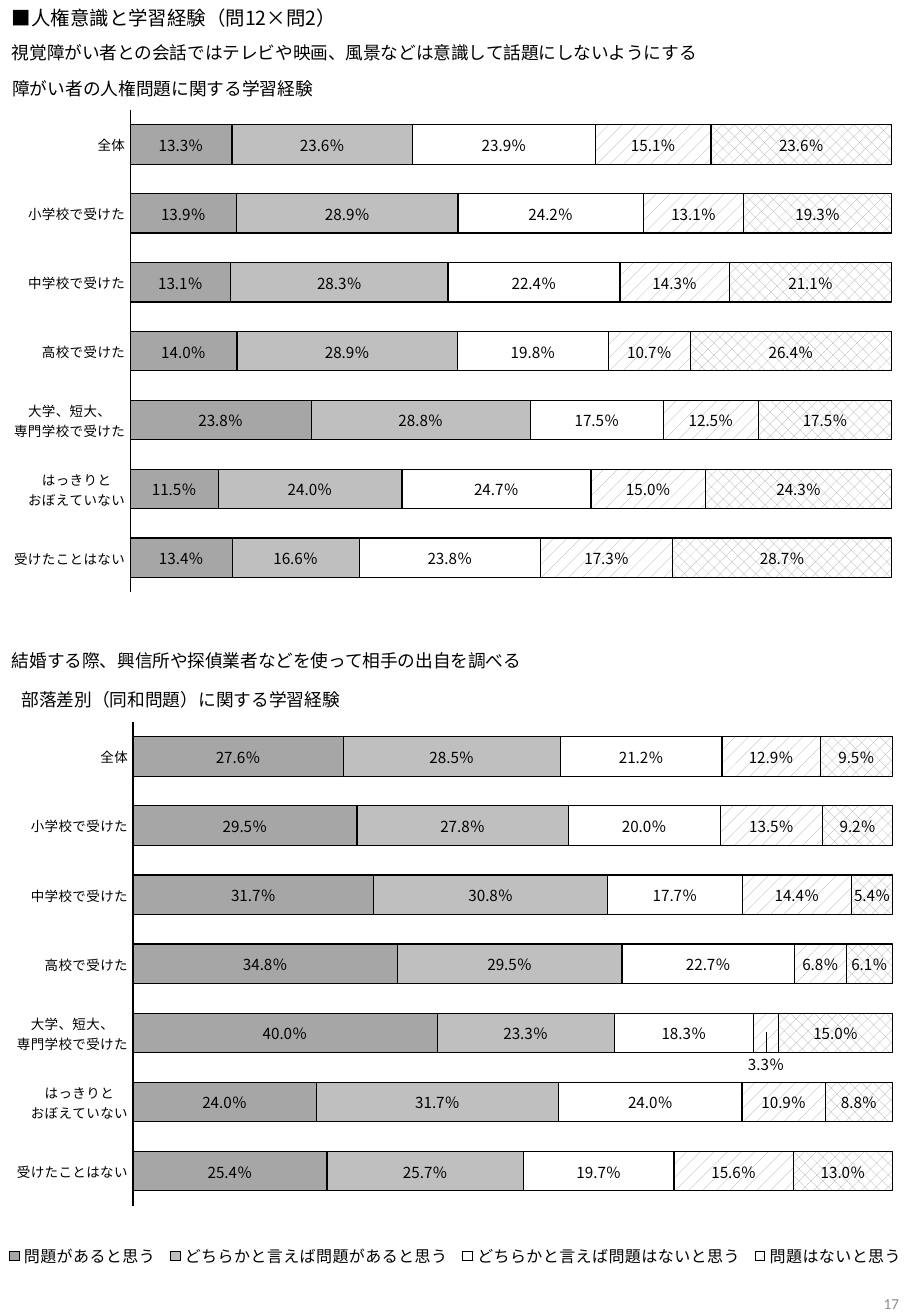
from dataclasses import dataclass

from pptx import Presentation, util as u
from pptx.chart.data import CategoryChartData
from pptx.dml.color import RGBColor
from pptx.enum import chart as ch, dml, text
from pptx.oxml import parse_xml
from pptx.oxml.ns import nsdecls, qn
from pptx.oxml.xmlchemy import OxmlElement


@dataclass(frozen=True)
class Theme:
    font: str = "Noto Sans CJK JP"
    number_font: str = "Calibri"
    ink: str = "000000"
    page_grey: str = "8C8C8C"
    dark: str = "A6A6A6"
    light: str = "BFBFBF"
    paper: str = "FFFFFF"
    heading: float = 11.5
    question: float = 10.5
    legend: float = 9.5
    label: float = 9
    category: float = 8
    line: float = 0.75


T = Theme()
PERCENT = '0.0"％"'
CATEGORIES = ["全体", "小学校で受けた", "中学校で受けた", "高校で受けた",
              "大学、短大、\n専門学校で受けた", "はっきりと\nおぼえていない",
              "受けたことはない"]
ANSWERS = ["問題があると思う", "どちらかと言えば問題があると思う",
           "どちらかと言えば問題はないと思う", "問題はないと思う", "わからない"]
FILLS = [T.dark, T.light, None,
         dml.MSO_PATTERN.PERCENT_10, dml.MSO_PATTERN.PERCENT_30]

# One row per answer, one value per category
DISABILITY = [
    [13.3, 13.9, 13.1, 14.0, 23.8, 11.5, 13.4],
    [23.6, 28.9, 28.3, 28.9, 28.8, 24.0, 16.6],
    [23.9, 24.2, 22.4, 19.8, 17.5, 24.7, 23.8],
    [15.1, 13.1, 14.3, 10.7, 12.5, 15.0, 17.3],
    [23.6, 19.3, 21.1, 26.4, 17.5, 24.3, 28.7],
]
BURAKU = [
    [27.6, 29.5, 31.7, 34.8, 40.0, 24.0, 25.4],
    [28.5, 27.8, 30.8, 29.5, 23.3, 31.7, 25.7],
    [21.2, 20.0, 17.7, 22.7, 18.3, 24.0, 19.7],
    [12.9, 13.5, 14.4, 6.8, 3.3, 10.9, 15.6],
    [9.5, 9.2, 5.4, 6.1, 15.0, 8.8, 13.0],
]


def rgb(value):
    return RGBColor.from_string(value)


def style(font, size, color=T.ink, name=T.font):
    font.size, font.name, font.bold = u.Pt(size), name, False
    font.color.rgb = rgb(color)
    east_asian = OxmlElement("a:ea")
    east_asian.set("typeface", name)
    font._element.find(qn("a:latin")).addnext(east_asian)


def add_text(s, content, box, size, color=T.ink, name=T.font, align=None):
    tf = s.shapes.add_textbox(*map(u.Cm, box)).text_frame
    tf.word_wrap = True
    tf.text = content
    p = tf.paragraphs[0]
    p.alignment = align
    style(p.runs[0].font, size, color, name)
    return tf


def set_layout(parent, index, x, y, size=None, edge=True, inner=False):
    """Give a chart part a manual place, in fractions of the chart."""
    for old in parent.findall(qn("c:layout")):
        parent.remove(old)
    values = [("layoutTarget", "inner")] if inner else []
    if edge:
        values += [("xMode", "edge"), ("yMode", "edge")]
    values += [("x", x), ("y", y)]
    if size:
        values += zip("wh", size)
    items = "".join(f'<c:{tag} val="{value}"/>' for tag, value in values)
    parent.insert(index, parse_xml(
        f'<c:layout {nsdecls("c")}><c:manualLayout>{items}'
        "</c:manualLayout></c:layout>"))


def paint(series, fill):
    f = series.format.fill
    if fill is None:
        f.background()
    elif isinstance(fill, str):
        f.solid()
        f.fore_color.rgb = rgb(fill)
    else:
        f.patterned()
        f.pattern = fill
        f.fore_color.rgb = rgb(T.dark)
        f.back_color.rgb = rgb(T.paper)
    series.format.line.color.rgb = rgb(T.ink)
    series.format.line.width = u.Pt(T.line)


def add_bars(s, title, rows, box, title_at, plot_at, plot_size):
    data = CategoryChartData(number_format=PERCENT)
    data.categories = CATEGORIES
    for answer, values in zip(ANSWERS, rows):
        data.add_series(answer, values)
    chart = s.shapes.add_chart(ch.XL_CHART_TYPE.BAR_STACKED_100,
                               *map(u.Cm, box), data).chart
    style(chart.font, T.label)
    chart.has_legend = False

    # Title and plot area
    tf = chart.chart_title.text_frame
    tf.text = title
    style(tf.paragraphs[0].runs[0].font, T.question)
    set_layout(chart.chart_title._element, 1, *title_at)
    plot_area = chart._chartSpace.chart.plotArea
    set_layout(plot_area, 0, *plot_at, plot_size, inner=True)

    # Axes
    axis = chart.category_axis
    axis.reverse_order = True
    axis.major_tick_mark = ch.XL_TICK_MARK.NONE
    axis.format.line.color.rgb = rgb(T.ink)
    axis.format.line.width = u.Pt(T.line)
    style(axis.tick_labels.font, T.category)
    chart.value_axis.visible = False
    chart.value_axis.has_major_gridlines = False

    # Bars and their labels
    plot = chart.plots[0]
    plot.gap_width, plot.overlap = 75, 100
    for series, fill in zip(plot.series, FILLS):
        paint(series, fill)
        labels = series.data_labels
        labels.show_value = True
        labels.number_format = PERCENT
        labels.number_format_is_linked = False
        labels.position = ch.XL_LABEL_POSITION.CENTER
        style(labels.font, T.label)
    return chart


def lower_label(chart, answer, category, shift):
    """Move the label of a narrow bar below it."""
    label = chart.plots[0].series[answer].points[category].data_label
    style(label.font, T.label)
    label.position = ch.XL_LABEL_POSITION.CENTER
    element = label._dLbl
    set_layout(element, 1, 0, shift, edge=False)
    number_format = OxmlElement("c:numFmt")
    number_format.set("formatCode", PERCENT)
    number_format.set("sourceLinked", "0")
    element.insert(2, number_format)


def add_legend(chart, at, size):
    chart.has_legend = True
    legend = chart.legend
    legend.position = ch.XL_LEGEND_POSITION.BOTTOM
    legend.include_in_layout = False
    style(legend.font, T.legend)
    set_layout(legend._element, 1, *at, size)


def main():
    prs = Presentation()
    prs.slide_width, prs.slide_height = u.Cm(19.05), u.Cm(27.51)
    s = prs.slides.add_slide(prs.slide_layouts[6])

    # Disability rights
    add_bars(s, "障がい者の人権問題に関する学習経験", DISABILITY,
             (0, 0.99, 19.05, 11.71), (0.01, 0.04), (0.143, 0.112), (0.836, 0.861))
    add_text(s, "■人権意識と学習経験（問12×問2）", (0, 0, 19.05, 0.74), T.heading)
    add_text(s, "視覚障がい者との会話ではテレビや映画、風景などは意識して話題にしないようにする",
             (0, 0.74, 19.05, 0.71), T.question)

    # Buraku discrimination, with the legend for both charts
    add_text(s, "結婚する際、興信所や探偵業者などを使って相手の出自を調べる",
             (0, 13.46, 19.05, 0.71), T.question)
    chart = add_bars(s, "部落差別（同和問題）に関する学習経験", BURAKU,
                     (0, 13.84, 19.05, 12.8), (0.02, 0.03), (0.146, 0.098), (0.834, 0.79))
    lower_label(chart, answer=3, category=4, shift=0.05)
    add_legend(chart, (0, 0.94), (1, 0.06))

    # Page number
    tf = add_text(s, "17", (14.76, 27, 4.29, 0.51), T.label, T.page_grey,
                  T.number_font, text.PP_ALIGN.RIGHT)
    tf.vertical_anchor = text.MSO_ANCHOR.MIDDLE

    prs.save("out.pptx")


if __name__ == "__main__":
    main()
